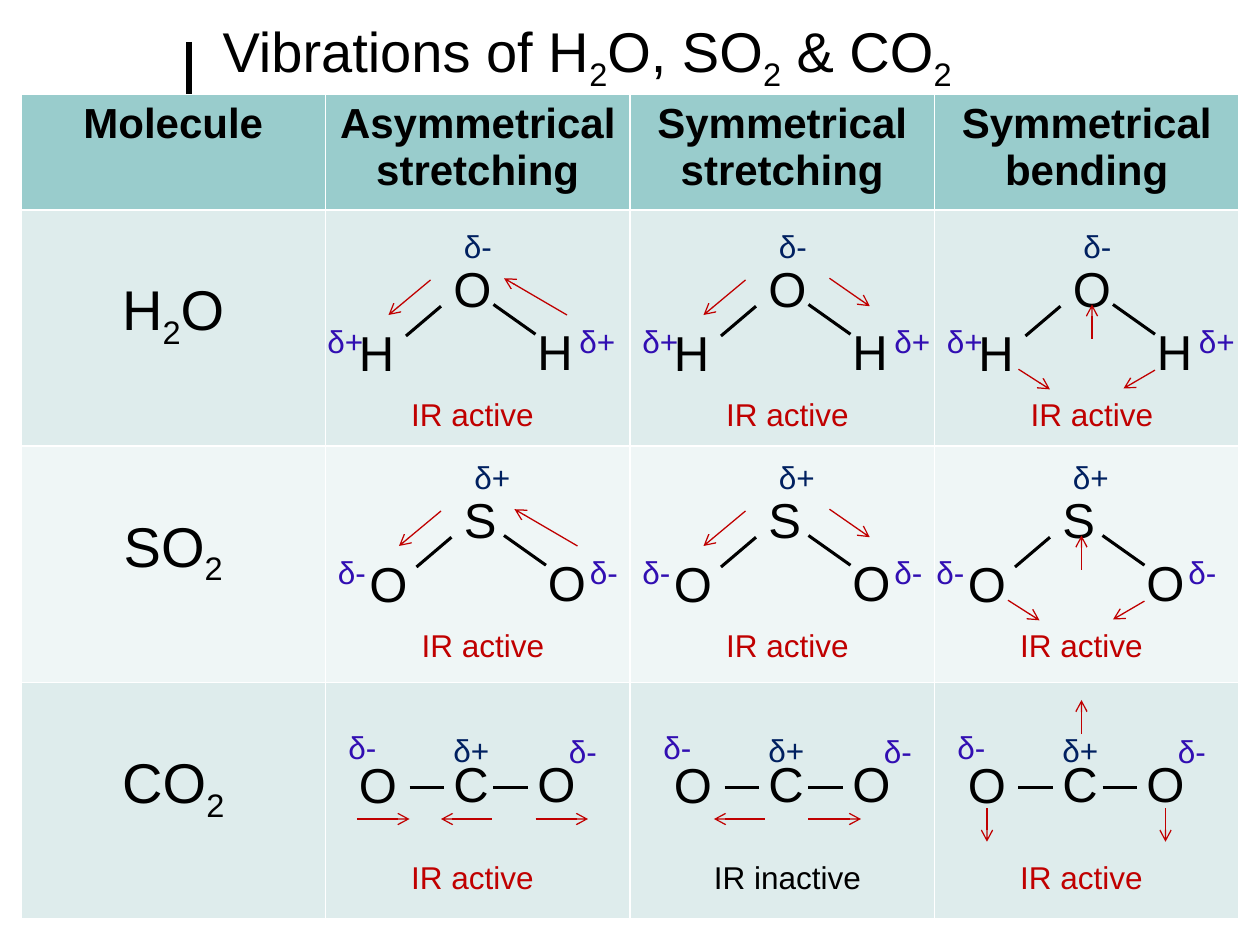
from dataclasses import dataclass
from itertools import groupby

from lxml import etree
from pptx import Presentation
from pptx.dml.color import RGBColor
from pptx.enum import shapes, text
from pptx.oxml import ns
from pptx.util import Pt


@dataclass(frozen=True)
class Theme:
    font: str = "Arial"
    black: str = "000000"
    red: str = "C00000"
    navy: str = "002060"
    violet: str = "310EB2"
    head: str = "99CCCC"
    odd: str = "DEECEC"
    even: str = "EFF6F6"
    large: int = 32
    atom: int = 28
    label: int = 24
    small: int = 18
    rule: float = 3
    bond: float = 1.75
    arrow: float = 0.75


T = Theme()
PIN = {"H": "δ+", "O": "δ-"}
BENT = {
    "asym": [(48, 16, 24, 36), (126, 36, 90, 15)],
    "sym": [(48, 16, 24, 36), (96, 15, 119, 31)],
    "bend": [(30, 67, 48, 78.5), (108, 67.5, 90, 78), (72, 49.5, 72, 30)],
}
FLAT = {
    "asym": [(6, 41, 36, 41), (83, 41, 54, 41), (108, 41, 138, 41)],
    "sym": [(59, 41, 30, 41), (84, 41, 114, 41)],
    "bend": [(18, 35, 18, 54), (120, 35, 120, 54), (72, -7.5, 72, -27)],
}


def style(para, size, color, bold=False):
    font = para.font
    font.name, font.size, font.bold = T.font, Pt(size), bold
    font.color.rgb = RGBColor.from_string(color)


def formula(para, words):
    for low, part in groupby(words, str.isdigit):
        run = para.add_run()
        run.text = "".join(part)
        if low:
            run._r.get_or_add_rPr().set("baseline", "-25000")


def write(slide, x, y, w, h, words, size, color, align=text.PP_ALIGN.LEFT):
    frame = slide.shapes.add_textbox(Pt(x), Pt(y), Pt(w), Pt(h)).text_frame
    frame.word_wrap = True
    frame.margin_right = 0 if align == text.PP_ALIGN.LEFT else frame.margin_left
    para = frame.paragraphs[0]
    para.text, para.alignment = words, align
    style(para, size, color)


def draw(slide, x, y, ends, color, width, tip=False):
    x1, y1, x2, y2 = ends
    line = slide.shapes.add_connector(
        shapes.MSO_CONNECTOR.STRAIGHT,
        Pt(x + x1), Pt(y + y1), Pt(x + x2), Pt(y + y2))
    line.line.color.rgb = RGBColor.from_string(color)
    line.line.width = Pt(width)
    props = line._element.spPr
    if tip:
        etree.SubElement(props.find(ns.qn("a:ln")), ns.qn("a:tailEnd"), type="arrow")
    etree.SubElement(props, ns.qn("a:effectLst"))


def title(slide, x, y, w, h):
    draw(slide, x, y, (-12, 18, -12, 48), T.black, T.rule)
    box = slide.shapes.title
    box.left, box.top, box.width, box.height = Pt(x), Pt(y), Pt(w), Pt(h)
    box.text_frame.vertical_anchor = text.MSO_ANCHOR.MIDDLE
    para = box.text_frame.paragraphs[0]
    para.alignment = text.PP_ALIGN.LEFT
    formula(para, "Vibrations of H2O, SO2 & CO2")
    style(para, T.large, T.black)


def grid(slide, x, y, w, h):
    heads = ["Molecule", "Asymmetrical stretching",
             "Symmetrical stretching", "Symmetrical bending"]
    rows = [heads] + [[name, "", "", ""] for name in ("H2O", "SO2", "CO2")]
    table = slide.shapes.add_table(4, 4, Pt(x), Pt(y), Pt(w), Pt(h)).table
    table.horz_banding = False
    top = 66
    for r, row in enumerate(rows):
        table.rows[r].height = Pt((h - top) / 3 if r else top)
        fill = T.head if r == 0 else T.odd if r % 2 else T.even
        for c, words in enumerate(row):
            cell = table.cell(r, c)
            cell.fill.solid()
            cell.fill.fore_color.rgb = RGBColor.from_string(fill)
            if not words:
                continue
            para = cell.text_frame.paragraphs[0]
            para.alignment = text.PP_ALIGN.CENTER
            formula(para, words)
            if r:
                cell.margin_top = Pt(40)
                style(para, T.large, T.black)
            else:
                style(para, T.label, T.black, True)


def panel(slide, x, y, atoms, marks, bonds, arrows, note, drop):
    for words, dx, dy in atoms:
        write(slide, x + dx, y + dy, 48, 41, words, T.atom, T.black)
    for ends in bonds:
        draw(slide, x, y, ends, T.black, T.bond)
    for words, dx, dy, color in marks:
        write(slide, x + dx, y + dy, 36, 29, words, T.small, color)
    for ends in arrows:
        draw(slide, x, y, ends, T.red, T.arrow, True)
    color = T.red if note == "IR active" else T.black
    write(slide, x, y + drop, 144, 29, note, T.small, color, text.PP_ALIGN.CENTER)


def bent(slide, x, y, core, side, mode):
    pole = "δ-" if side == "H" else "δ+"
    atoms = [(side, 0, 36.5), (side, 102, 36), (core, 54, 0)]
    marks = [(PIN[side], -18, 36.5, T.violet), (PIN[side], 126, 36.5, T.violet),
             (pole, 6 + 54, -18, T.navy)]
    bonds = [(34, 48, 54, 31), (108, 47, 84, 30)]
    panel(slide, x, y, atoms, marks, bonds, BENT[mode], "IR active", 78)


def flat(slide, x, y, mode):
    atoms = [("O", 0, 0.5), ("O", 102, 0), ("C", 54, 0)]
    marks = [("δ-", -6, -14.5, T.violet), ("δ-", 120, -12, T.violet),
             ("δ+", 54, -13, T.navy)]
    bonds = [(36, 23, 56, 23), (84, 23, 104, 23)]
    note = "IR inactive" if mode == "sym" else "IR active"
    panel(slide, x, y, atoms, marks, bonds, FLAT[mode], note, 60)


def main():
    deck = Presentation()
    deck.slide_width, deck.slide_height = Pt(720), Pt(540)
    slide = deck.slides.add_slide(deck.slide_layouts[5])
    title(slide, 120, 6, 552, 51)
    grid(slide, 12, 54, 696, 471)
    for mode, x in zip(BENT, (198, 378, 552)):
        bent(slide, x, 144, "O", "H", mode)
    for mode, x in zip(BENT, (204, 378, 546)):
        bent(slide, x, 276, "S", "O", mode)
    for mode, x in zip(FLAT, (198, 378, 546)):
        flat(slide, x, 427, mode)
    deck.save("out.pptx")


if __name__ == "__main__":
    main()
